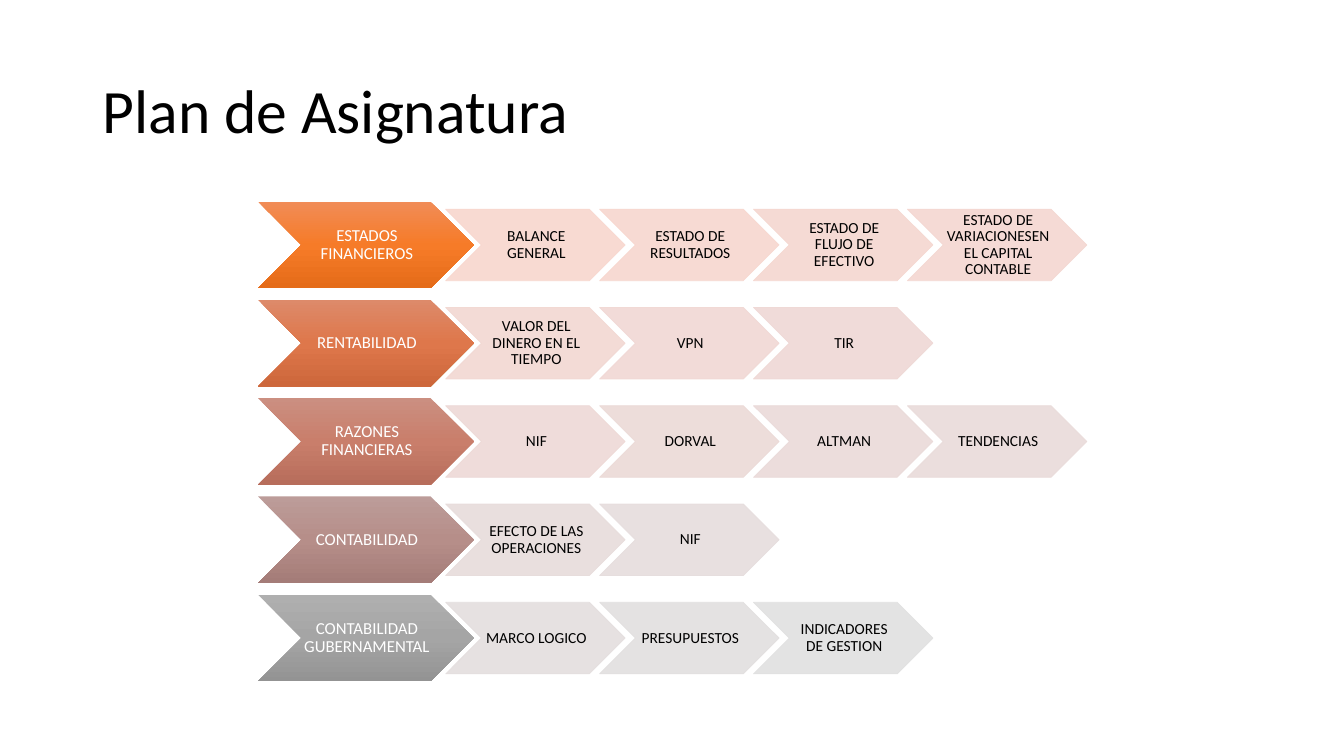
import copy

import pptx
import pptx.dml.color
import pptx.enum.shapes
import pptx.enum.text
import pptx.oxml
import pptx.oxml.ns
import pptx.util

Inches = pptx.util.Inches
Pt = pptx.util.Pt
RGBColor = pptx.dml.color.RGBColor
ALIGN = pptx.enum.text.PP_ALIGN
qn = pptx.oxml.ns.qn

COLORS = {"title": "000000", "topic": "FFFFFF", "step": "000000"}
TOPIC_GRADIENTS = {
    "ESTADOS FINANCIEROS": ["F18C57", "F67B28", "E56C19"],
    "RENTABILIDAD": ["DD8A6A", "DE774B", "CD673B"],
    "RAZONES FINANCIERAS": ["CB8F81", "C97E6B", "B76D5B"],
    "CONTABILIDAD": ["BC9C99", "B68E89", "A47C78"],
    "CONTABILIDAD GUBERNAMENTAL": ["AFAFAF", "A5A5A5", "939393"],
}
TOPIC_STEPS = {
    "ESTADOS FINANCIEROS": {
        "BALANCE GENERAL": "F8D7CE",
        "ESTADO DE RESULTADOS": "F7D7CF",
        "ESTADO DE FLUJO DE EFECTIVO": "F5D7D0",
        "ESTADO DE VARIACIONESEN EL CAPITAL CONTABLE": "F4D7D1",
    },
    "RENTABILIDAD": {
        "VALOR DEL DINERO EN EL TIEMPO": "F2D8D2",
        "VPN": "F1D8D4",
        "TIR": "EFD8D5",
    },
    "RAZONES FINANCIERAS": {
        "NIF": "EED9D6",
        "DORVAL": "ECDAD7",
        "ALTMAN": "EADAD9",
        "TENDENCIAS": "E9DBDA",
    },
    "CONTABILIDAD": {"EFECTO DE LAS OPERACIONES": "E7DCDB", "NIF": "E6DDDD"},
    "CONTABILIDAD GUBERNAMENTAL": {
        "MARCO LOGICO": "E4DEDE",
        "PRESUPUESTOS": "E2DFDF",
        "INDICADORES DE GESTION": "E1E1E1",
    },
}

TOP, ROW_PITCH = 2, 3.9 / 4
TOPIC_LEFT, TOPIC_WIDTH, TOPIC_HEIGHT = 2.56, 2.14, 0.86
STEP_LEFT, STEP_WIDTH, STEP_HEIGHT = 4.42, 1.78, 0.71
STEP_PITCH = 4.58 / 3


def write(box, text, size, color, align):
    frame = box.text_frame
    frame.word_wrap = True
    frame.vertical_anchor = pptx.enum.text.MSO_ANCHOR.MIDDLE
    para = frame.paragraphs[0]
    para.alignment = align
    para.line_spacing = 0.9
    span = para.add_run()
    span.text = text
    span.font.color.rgb = RGBColor.from_string(color)
    for name, value in {"name": "Calibri", "size": Pt(size)}.items():
        setattr(span.font, name, value)


def add_chevron(group, left, top, width, height, text, size, color):
    chevron = group.shapes.add_shape(
        pptx.enum.shapes.MSO_SHAPE.CHEVRON,
        Inches(left), Inches(top), Inches(width), Inches(height))
    chevron.shadow.inherit = False
    margins = {"margin_left": 0.02, "margin_top": 0.01,
               "margin_right": 0, "margin_bottom": 0.01}
    for name, value in margins.items():
        setattr(chevron.text_frame, name, Inches(value))
    write(chevron, text, size, color, ALIGN.CENTER)
    return chevron


deck = pptx.Presentation()
deck.slide_width = Inches(13.33)
deck.slide_height = Inches(7.5)
page = deck.slides.add_slide(deck.slide_layouts[6])

title = page.shapes.add_textbox(Inches(0.92), Inches(0.4), Inches(11.5), Inches(1.45))
write(title, "Plan de Asignatura", 44, COLORS["title"], ALIGN.LEFT)

plan = page.shapes.add_group_shape()
for row, (topic, steps) in enumerate(TOPIC_STEPS.items()):
    top = TOP + row * ROW_PITCH
    head = add_chevron(plan, TOPIC_LEFT, top, TOPIC_WIDTH, TOPIC_HEIGHT,
                       topic, 12, COLORS["topic"])
    head.line.fill.background()
    head.fill.gradient()
    head.fill.gradient_angle = 270
    stop_list = head._element.spPr.find(qn("a:gradFill")).find(qn("a:gsLst"))
    stop_list.append(copy.deepcopy(stop_list[0]))
    for stop, position, color in zip(head.fill.gradient_stops, (0, 0.5, 1),
                                     TOPIC_GRADIENTS[topic]):
        stop.position = position
        stop.color.rgb = RGBColor.from_string(color)

    step_top = top + (TOPIC_HEIGHT - STEP_HEIGHT) / 2
    for column, (step, color) in enumerate(steps.items()):
        chevron = add_chevron(plan, STEP_LEFT + column * STEP_PITCH, step_top,
                              STEP_WIDTH, STEP_HEIGHT, step, 11, COLORS["step"])
        chevron.line.width = Pt(0.5)
        for fill in (chevron.fill, chevron.line.fill):
            fill.solid()
            fill.fore_color.rgb = RGBColor.from_string(color)
        for tint in chevron._element.spPr.iter(qn("a:srgbClr")):
            alpha = pptx.oxml.parse_xml(
                '<a:alpha xmlns:a="http://schemas.openxmlformats.org/drawingml/2006/main"'
                ' val="90000"/>')
            tint.append(alpha)

deck.save("out.pptx")
